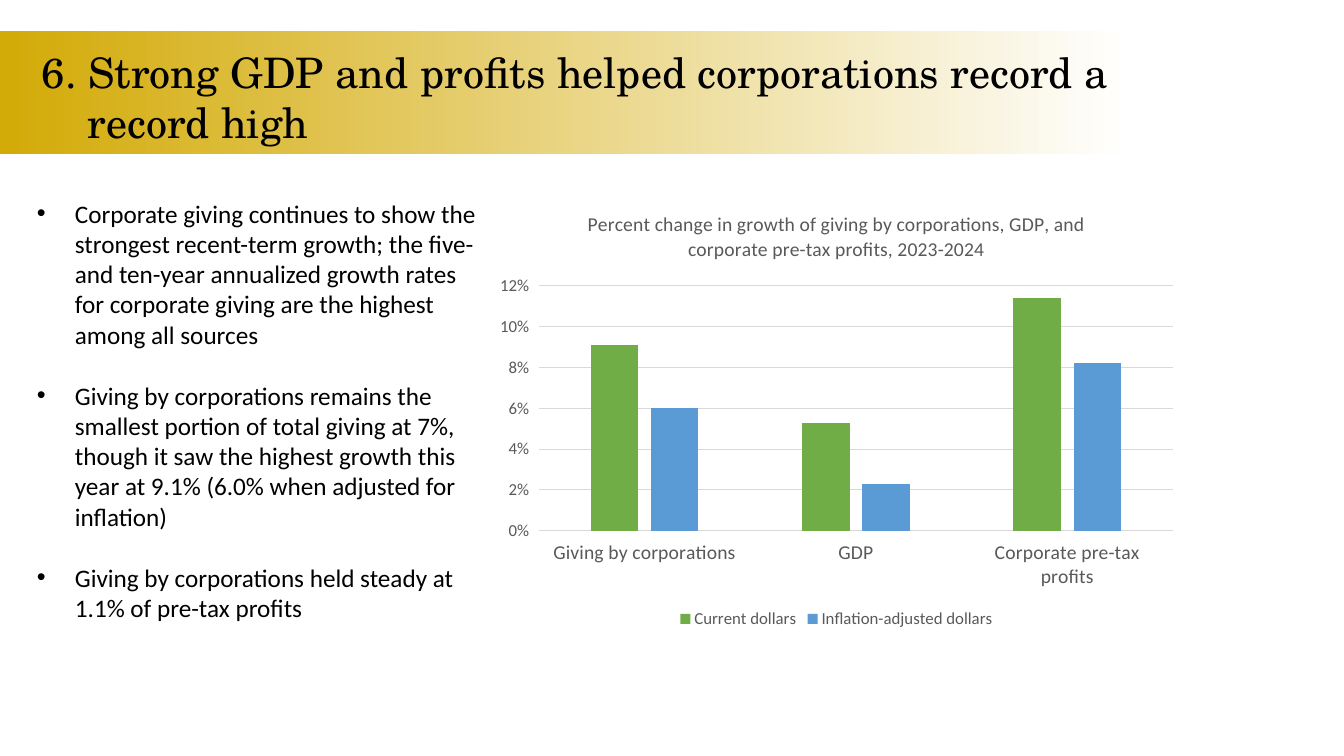
from lxml import etree
from pptx import Presentation
from pptx import util as u
from pptx.chart.data import CategoryChartData
from pptx.dml.color import RGBColor
from pptx.enum import chart as charts, shapes, text
from pptx.oxml.ns import qn

EMU_PER_PX = 914400 / 100.8
COLORS = {
    "gold": "D3AA07", "white": "FFFFFF", "black": "000000",
    "gray": "595959", "grid": "D9D9D9", "green": "70AD47", "blue": "5B9BD5",
}


def px(*lengths):
    return [u.Emu(round(length * EMU_PER_PX)) for length in lengths]


def style_font(font, size, color, name="Calibri"):
    font.size = u.Pt(size)
    font.name = name
    font.bold = False
    font.color.rgb = RGBColor.from_string(COLORS[color])


presentation = Presentation()
presentation.slide_width, presentation.slide_height = px(1344, 756)
slide = presentation.slides.add_slide(presentation.slide_layouts[6])

# Gold band fading to white
band = slide.shapes.add_shape(shapes.MSO_SHAPE.RECTANGLE, *px(0, 31, 1153, 123))
band.shadow.inherit = False
band.line.fill.background()
band.fill.gradient()
band.fill.gradient_angle = 0
for stop, position, color in zip(band.fill.gradient_stops, (0, 0.98), ("gold", "white")):
    stop.position = position
    stop.color.rgb = RGBColor.from_string(COLORS[color])

# Title in two lines, the second indented past the number
title_lines = [
    ("6. Strong GDP and profits helped corporations record a", (32, 48, 1108, 53)),
    ("record high", (78, 102, 1108, 45)),
]
for words, place in title_lines:
    frame = slide.shapes.add_textbox(*px(*place)).text_frame
    frame.word_wrap = True
    frame.vertical_anchor = text.MSO_ANCHOR.MIDDLE
    paragraph = frame.paragraphs[0]
    paragraph.line_spacing = 0.9
    run = paragraph.add_run()
    run.text = words
    style_font(run.font, 30, "black", "TeX Gyre Schola")

# Bullet points
points = [
    "Corporate giving continues to show the strongest recent-term growth; the five- and "
    "ten-year annualized growth rates for corporate giving are the highest among all sources",
    "Giving by corporations remains the smallest portion of total giving at 7%, though it "
    "saw the highest growth this year at 9.1% (6.0% when adjusted for inflation)",
    "Giving by corporations held steady at 1.1% of pre-tax profits",
]
indent, = px(38)
frame = slide.shapes.add_textbox(*px(27, 193, 459, 440)).text_frame
frame.word_wrap = True
for index, point in enumerate(points):
    paragraph = frame.add_paragraph() if index else frame.paragraphs[0]
    properties = paragraph._p.get_or_add_pPr()
    properties.set("marL", str(indent))
    properties.set("indent", str(-indent))
    etree.SubElement(properties, qn("a:buFont"), typeface="Arial")
    etree.SubElement(properties, qn("a:buChar"), char="•")
    if index:
        paragraph.space_before = u.Pt(22)
    run = paragraph.add_run()
    run.text = point
    style_font(run.font, 18, "black")

# Column chart
data = CategoryChartData(number_format="0%")
data.categories = ["Giving by corporations", "GDP", "Corporate pre-tax profits"]
data.add_series("Current dollars", (0.091, 0.053, 0.114))
data.add_series("Inflation-adjusted dollars", (0.06, 0.023, 0.082))
chart = slide.shapes.add_chart(
    charts.XL_CHART_TYPE.COLUMN_CLUSTERED, *px(486, 193, 701, 440), data).chart
style_font(chart.font, 10, "black")

chart.has_title = True
chart.chart_title.include_in_layout = False
run = chart.chart_title.text_frame.paragraphs[0].add_run()
run.text = ("Percent change in growth of giving by corporations, GDP, "
            "and corporate pre-tax profits, 2023-2024")
style_font(run.font, 14, "gray")

chart.has_legend = True
chart.legend.position = charts.XL_LEGEND_POSITION.BOTTOM
chart.legend.include_in_layout = False
style_font(chart.legend.font, 12, "gray")

plot = chart.plots[0]
plot.vary_by_categories = False
plot.gap_width = 219
plot.overlap = -27
for series, color in zip(plot.series, ("green", "blue")):
    series.format.fill.solid()
    series.format.fill.fore_color.rgb = RGBColor.from_string(COLORS[color])

# Axes
categories, values = chart.category_axis, chart.value_axis
for axis, size in ((categories, 14), (values, 12)):
    axis.major_tick_mark = axis.minor_tick_mark = charts.XL_TICK_MARK.NONE
    axis.tick_label_position = charts.XL_TICK_LABEL_POSITION.LOW
    style_font(axis.tick_labels.font, size, "gray")
values.minimum_scale, values.maximum_scale, values.major_unit = 0, 0.12, 0.02
values.tick_labels.number_format = "0%"
values.tick_labels.number_format_is_linked = False
values.format.line.fill.background()
for line in (categories.format.line, values.major_gridlines.format.line):
    line.color.rgb = RGBColor.from_string(COLORS["grid"])
    line.width = u.Pt(0.75)

presentation.save("out.pptx")
